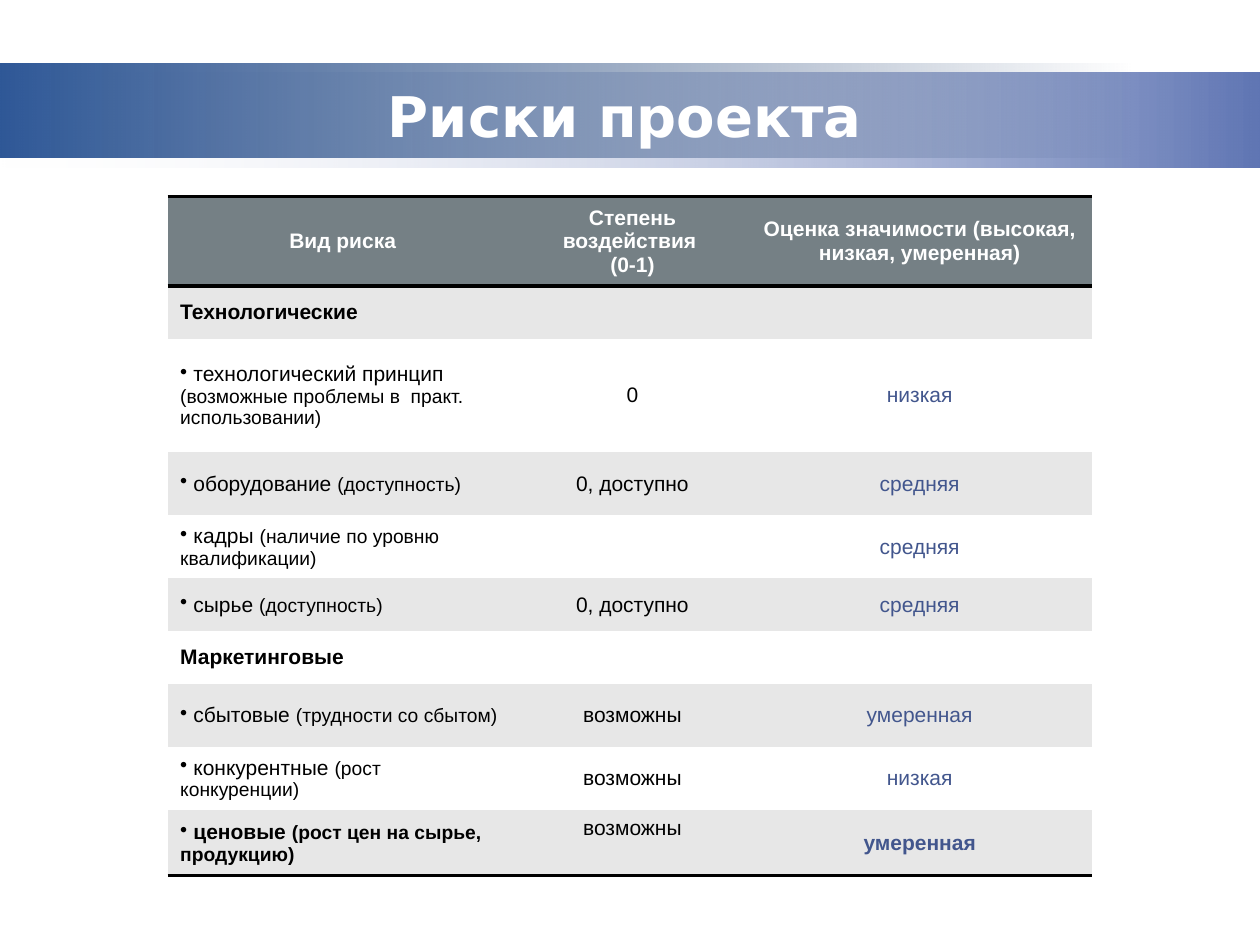
"""Builds the project risk slide: a gradient title band above a risk table."""
from pptx import Presentation, util as u
from pptx.dml.color import RGBColor
from pptx.enum import shapes as s, text as t
from pptx.oxml import parse_xml
from pptx.oxml.ns import qn, nsdecls

HUES = {"white": "FFFFFF", "black": "000000", "head": "758085", "band": "E7E7E7",
        "rate": "42568D", "pale": "F2F3F7", "lilac": "6076B4", "blue": "2F5897",
        "navy": "223F6C"}
WIDE, HIGH = u.Inches(10), u.Inches(7.5)
COLS = [2.78, 1.82, 2.74]
ROWS = [0.71, 0.42, 0.9, 0.5, 0.5, 0.42, 0.42, 0.5, 0.5, 0.52]
PLAIN = "{2D5ABB26-0587-4C30-8999-92F81FD0307C}"
RISKS = [
    ("Вид риска", "", "Степень воздействия \n(0-1)",
     "Оценка значимости (высокая, низкая, умеренная)"),
    ("Технологические", "", "", ""),
    (" технологический принцип ", "(возможные проблемы в  практ. использовании)",
     "0", "низкая"),
    (" оборудование ", "(доступность)", "0, доступно", "средняя"),
    (" кадры ", "(наличие по уровню квалификации)", "", "средняя"),
    (" сырье ", "(доступность)", "0, доступно", "средняя"),
    ("Маркетинговые", "", "", ""),
    (" сбытовые ", "(трудности со сбытом)", "возможны", "умеренная"),
    (" конкурентные ", "(рост конкуренции)", "возможны", "низкая"),
    (" ценовые ", "(рост цен на сырье, продукцию)", "возможны", "умеренная"),
]


def write(para, words, hue, **form):
    run = para.add_run()
    run.text = words
    for key, val in ({"name": "Arial", "size": u.Pt(12), "bold": False} | form).items():
        setattr(run.font, key, val)
    run.font.color.rgb = RGBColor.from_string(HUES[hue])


def rule(cell, side):
    cell._tc.get_or_add_tcPr().insert(0, parse_xml(
        f'<a:{side} {nsdecls("a")} w="{u.Pt(2)}"><a:solidFill>'
        f'<a:srgbClr val="{HUES["black"]}"/></a:solidFill></a:{side}>'))


deck = Presentation()
deck.slide_width, deck.slide_height = WIDE, HIGH
slide = deck.slides.add_slide(deck.slide_layouts[6])

for top, wide, hues, clear in ((0.077, 1, ("pale", "lilac"), 0),
                               (0.067, 0.9, ("blue", "navy"), 1)):
    bar = slide.shapes.add_shape(s.MSO_SHAPE.RECTANGLE, 0, int(HIGH * top),
                                 int(WIDE * wide), int(HIGH * 0.1))
    bar.shadow.inherit = False
    bar.line.fill.background()
    bar.fill.gradient()
    bar.fill.gradient_angle = 0
    for spot, (stop, hue) in enumerate(zip(bar.fill.gradient_stops, hues)):
        stop.position = spot
        stop.color.rgb = RGBColor.from_string(HUES[hue])
    tint = list(bar.element.spPr.iter(qn("a:srgbClr")))[clear]
    tint.append(parse_xml(f'<a:alpha {nsdecls("a")} val="0"/>'))

title = slide.shapes.add_textbox(int(WIDE * 0.092), int(HIGH * 0.08),
                                 int(WIDE * 0.808), int(HIGH * 0.083))
frame = title.text_frame
frame.word_wrap = True
frame.vertical_anchor = t.MSO_ANCHOR.MIDDLE
frame.paragraphs[0].alignment = t.PP_ALIGN.CENTER
write(frame.paragraphs[0], "Риски проекта", "white",
      name="DejaVu Sans", size=u.Pt(32), bold=True)

grid = slide.shapes.add_table(len(ROWS), len(COLS), int(WIDE * 0.133), int(HIGH * 0.208),
                              u.Inches(sum(COLS)), u.Inches(sum(ROWS))).table
grid.first_row = grid.horz_banding = False
grid._tbl.tblPr.find(qn("a:tableStyleId")).text = PLAIN
for col, wide in zip(grid.columns, COLS):
    col.width = u.Inches(wide)

last = len(ROWS) - 1
for y, (risk, note, *marks) in enumerate(RISKS):
    grid.rows[y].height = u.Inches(ROWS[y])
    for x, words in enumerate((risk, *marks)):
        cell = grid.cell(y, x)
        cell.vertical_anchor = t.MSO_ANCHOR.MIDDLE
        cell.fill.solid()
        back = "head" if y == 0 else "band" if y % 2 else "white"
        cell.fill.fore_color.rgb = RGBColor.from_string(HUES[back])
        for side, on in (("lnB", y in (0, last)), ("lnT", y == 0)):
            if on:
                rule(cell, side)
        hue = "white" if y == 0 else "rate" if x == 2 else "black"
        bold = not note or (y == last and x != 1)
        for n, line in enumerate(words.split("\n") if words else []):
            para = cell.text_frame.add_paragraph() if n else cell.text_frame.paragraphs[0]
            para.alignment = t.PP_ALIGN.CENTER if x or y == 0 else t.PP_ALIGN.LEFT
            write(para, line, hue, bold=bold)
            if note and x == 0:
                write(para, note, hue, bold=bold, size=u.Pt(11))
                para._p.get_or_add_pPr().append(
                    parse_xml(f'<a:buChar {nsdecls("a")} char="•"/>'))
grid.cell(last, 1).vertical_anchor = t.MSO_ANCHOR.TOP

deck.save("out.pptx")
